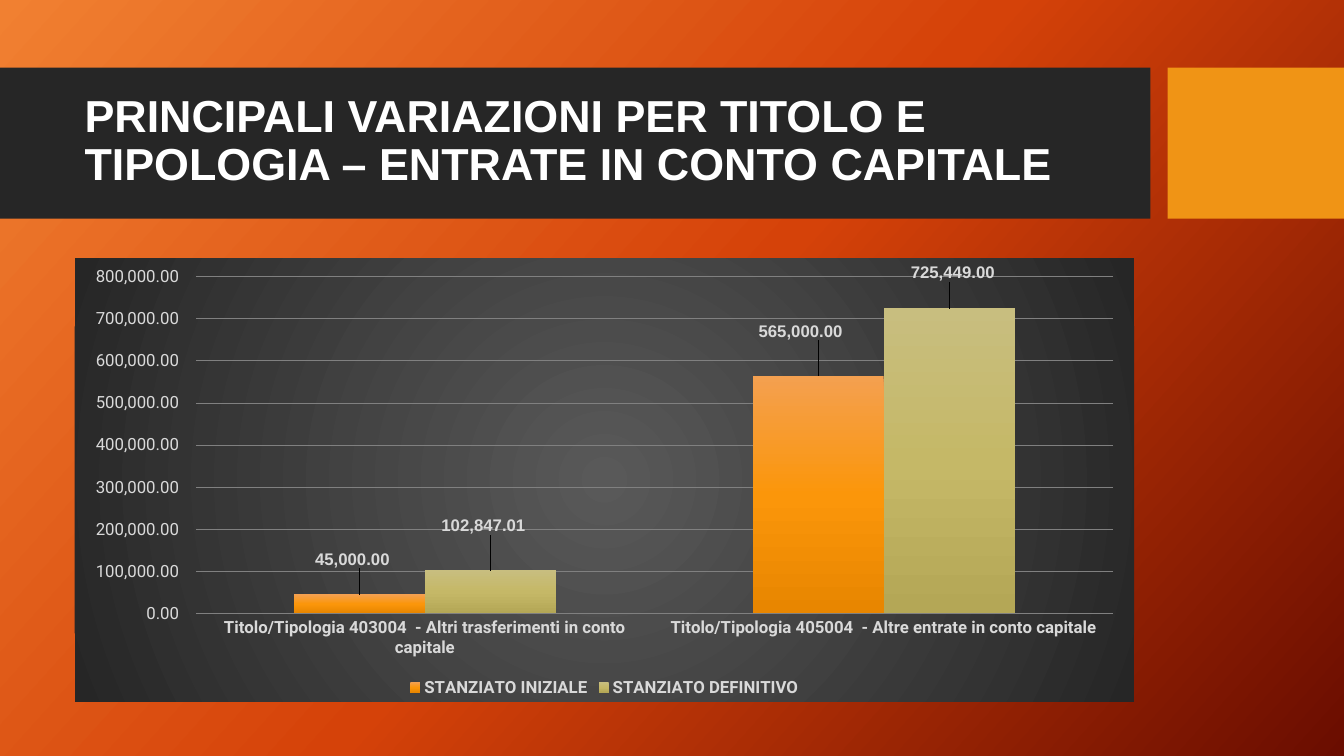
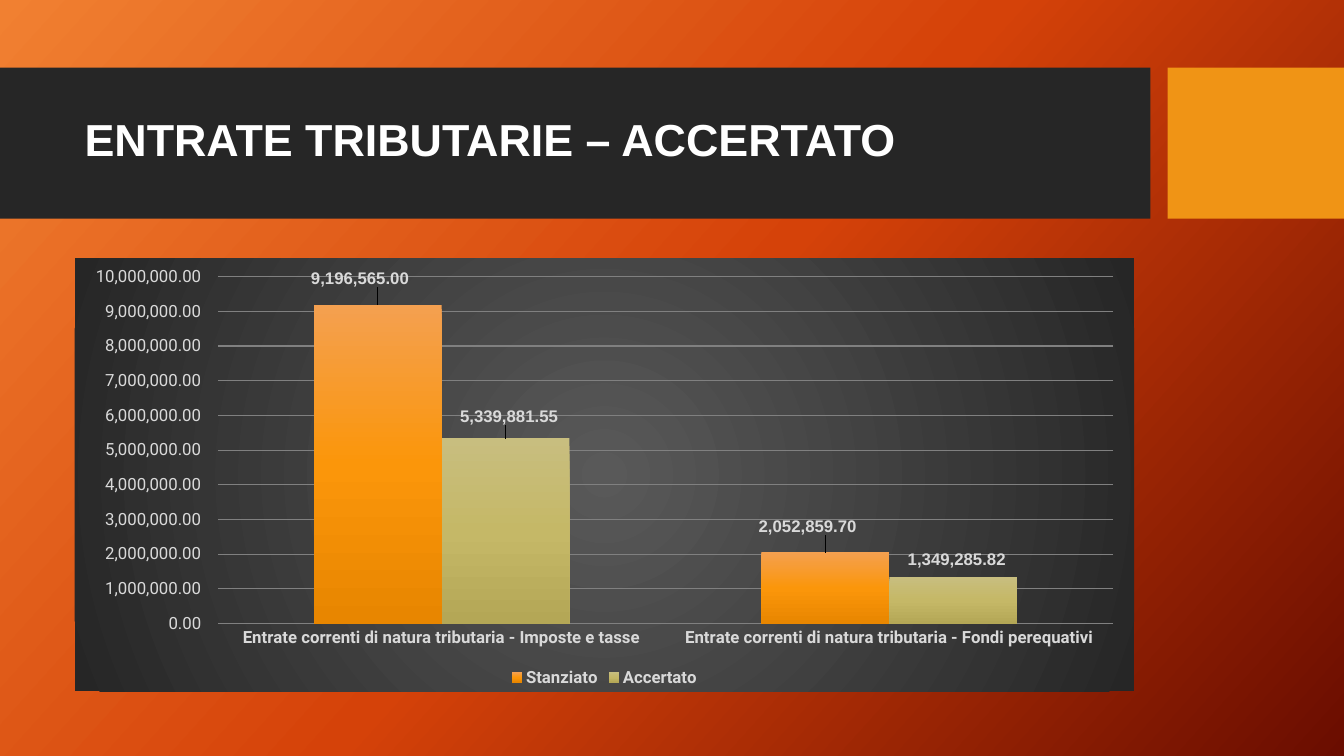
from pptx import Presentation
from pptx.chart.data import CategoryChartData
from pptx.dml.color import RGBColor
from pptx.enum.chart import XL_CHART_TYPE, XL_LABEL_POSITION, XL_LEGEND_POSITION, XL_TICK_MARK
from pptx.enum.shapes import MSO_SHAPE
from pptx.enum.text import MSO_ANCHOR
from pptx.oxml import parse_xml
from pptx.oxml.ns import nsdecls
from pptx.util import Inches, Pt

COLORS = {
    "band": "262626",
    "accent": "F09415",
    "title": "FFFFFF",
    "label": "D9D9D9",
    "grid": "808080",
}
BACKDROP = ["F18031", "D54209", "6A0D00"]
PANEL = ["595959", "262626"]
BAR_FILLS = [["F4A050", "FB960A", "E88600"], ["C8BE7F", "C5B867", "B4A756"]]
AMOUNT_FORMAT = "#,##0.00\\ _€"
BANDS = [(0, 11.41, "band"), (11.58, 1.75, "accent")]

SLIDES = [
    {
        "title": "PRINCIPALI VARIAZIONI PER TITOLO E TIPOLOGIA – ENTRATE IN CONTO CAPITALE",
        "height": 4.4,
        "categories": [
            "Titolo/Tipologia 403004  - Altri trasferimenti in conto capitale",
            "Titolo/Tipologia 405004  - Altre entrate in conto capitale",
        ],
        "series": [
            ("STANZIATO INIZIALE", [45000, 565000], [(0, -0.05), (-0.01, -0.07)]),
            ("STANZIATO DEFINITIVO", [102847.01, 725449], [(0, -0.07), (0.01, -0.05)]),
        ],
    },
    {
        "title": "ENTRATE TRIBUTARIE – ACCERTATO",
        "height": 4.3,
        "categories": [
            "Entrate correnti di natura tributaria - Imposte e tasse",
            "Entrate correnti di natura tributaria - Fondi perequativi",
        ],
        "series": [
            ("Stanziato", [9196565, 2052859.7], [(-0.01, -0.03), (-0.01, -0.03)]),
            ("Accertato", [5339881.55, 1349285.82], [(0.01, -0.02), (0.01, -0.01)]),
        ],
    },
]


def gradient_xml(colors, angle=None):
    step = 100000 // (len(colors) - 1)
    stops = "".join(
        f'<a:gs pos="{i * step}"><a:srgbClr val="{color}"/></a:gs>'
        for i, color in enumerate(colors)
    )
    if angle is None:
        direction = (
            '<a:path path="circle">'
            '<a:fillToRect l="50000" t="50000" r="50000" b="50000"/></a:path>'
        )
    else:
        direction = f'<a:lin ang="{angle * 60000}" scaled="0"/>'
    return (
        f'<a:gradFill {nsdecls("a")} rotWithShape="1">'
        f"<a:gsLst>{stops}</a:gsLst>{direction}</a:gradFill>"
    )


def style_font(font, size, color, name, bold):
    font.size = Pt(size)
    font.name = name
    font.bold = bold
    font.color.rgb = RGBColor.from_string(COLORS[color])


prs = Presentation()
prs.slide_width = Inches(13.33)
prs.slide_height = Inches(7.5)

for content in SLIDES:
    slide = prs.slides.add_slide(prs.slide_layouts[6])
    slide.element.cSld.insert(0, parse_xml(
        f'<p:bg {nsdecls("p", "a")}><p:bgPr>{gradient_xml(BACKDROP, 42)}'
        "<a:effectLst/></p:bgPr></p:bg>"
    ))

    for left, width, color in BANDS:
        band = slide.shapes.add_shape(
            MSO_SHAPE.RECTANGLE, Inches(left), Inches(0.67), Inches(width), Inches(1.5)
        )
        band.shadow.inherit = False
        band.fill.solid()
        band.fill.fore_color.rgb = RGBColor.from_string(COLORS[color])
        band.line.fill.background()

    title = slide.shapes.add_textbox(
        Inches(0.74), Inches(0.82), Inches(10.51), Inches(1.18)
    ).text_frame
    title.word_wrap = True
    title.vertical_anchor = MSO_ANCHOR.MIDDLE
    heading = title.paragraphs[0]
    heading.line_spacing = 0.9
    heading_run = heading.add_run()
    heading_run.text = content["title"]
    style_font(heading_run.font, 32, "title", "Arial", True)

    amounts = CategoryChartData(number_format=AMOUNT_FORMAT)
    amounts.categories = content["categories"]
    for name, values, offsets in content["series"]:
        amounts.add_series(name, values)
    chart = slide.shapes.add_chart(
        XL_CHART_TYPE.COLUMN_CLUSTERED,
        Inches(0.74), Inches(2.56), Inches(10.51), Inches(content["height"]), amounts,
    ).chart
    chart.has_title = False
    style_font(chart.font, 10, "title", "Roboto", False)
    chart.element.xpath("c:chart")[0].addnext(parse_xml(
        f'<c:spPr {nsdecls("c", "a")}>{gradient_xml(PANEL)}<a:ln><a:noFill/></a:ln></c:spPr>'
    ))

    chart.has_legend = True
    chart.legend.position = XL_LEGEND_POSITION.BOTTOM
    chart.legend.include_in_layout = False
    style_font(chart.legend.font, 12, "label", "Roboto", True)

    for axis, bold in [(chart.category_axis, True), (chart.value_axis, False)]:
        axis.major_tick_mark = XL_TICK_MARK.NONE
        axis.minor_tick_mark = XL_TICK_MARK.NONE
        axis.format.line.fill.background()
        style_font(axis.tick_labels.font, 12, "label", "Roboto", bold)
    chart.value_axis.tick_labels.number_format = AMOUNT_FORMAT
    chart.value_axis.tick_labels.number_format_is_linked = False
    grid_line = chart.value_axis.major_gridlines.format.line
    grid_line.width = Pt(0.75)
    grid_line.color.rgb = RGBColor.from_string(COLORS["grid"])

    plot = chart.plots[0]
    plot.gap_width = 150
    plot.overlap = 0
    plot.vary_by_categories = False
    series_nodes = chart.element.xpath(".//c:ser")
    for series, node, colors, (name, values, offsets) in zip(
        plot.series, series_nodes, BAR_FILLS, content["series"]
    ):
        series.format.line.fill.background()
        node.xpath("c:spPr")[0].insert(0, parse_xml(gradient_xml(colors, 90)))
        labels = series.data_labels
        labels.show_value = True
        labels.number_format = AMOUNT_FORMAT
        labels.number_format_is_linked = False
        labels.position = XL_LABEL_POSITION.OUTSIDE_END
        style_font(labels.font, 12, "label", "Arial", True)
        for i, (dx, dy) in enumerate(offsets):
            label = series.points[i].data_label
            label.position = XL_LABEL_POSITION.OUTSIDE_END
            style_font(label.font, 12, "label", "Arial", True)
            index = node.xpath("c:dLbls/c:dLbl/c:idx")[i]
            index.addnext(parse_xml(
                f'<c:numFmt {nsdecls("c")} formatCode="{AMOUNT_FORMAT}" sourceLinked="0"/>'
            ))
            index.addnext(parse_xml(
                f'<c:layout {nsdecls("c")}><c:manualLayout>'
                f'<c:x val="{dx}"/><c:y val="{dy}"/></c:manualLayout></c:layout>'
            ))

prs.save("out.pptx")
